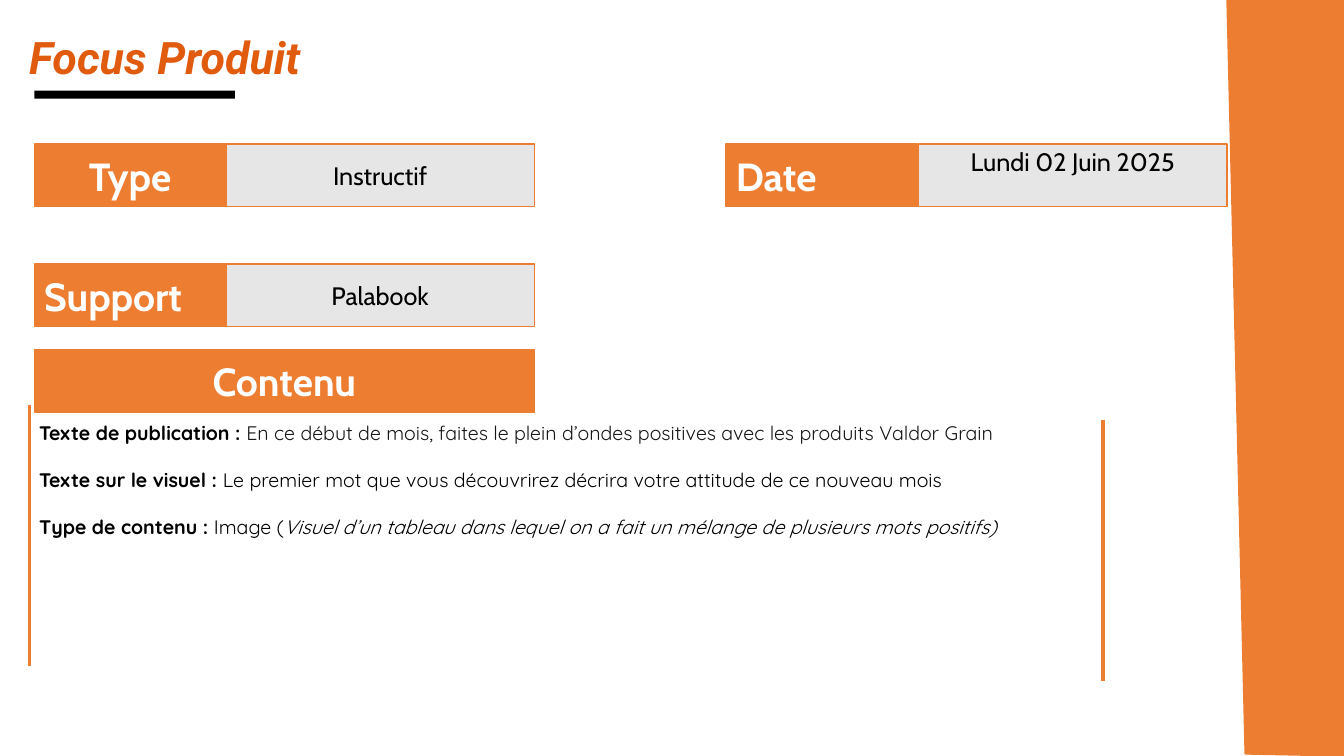
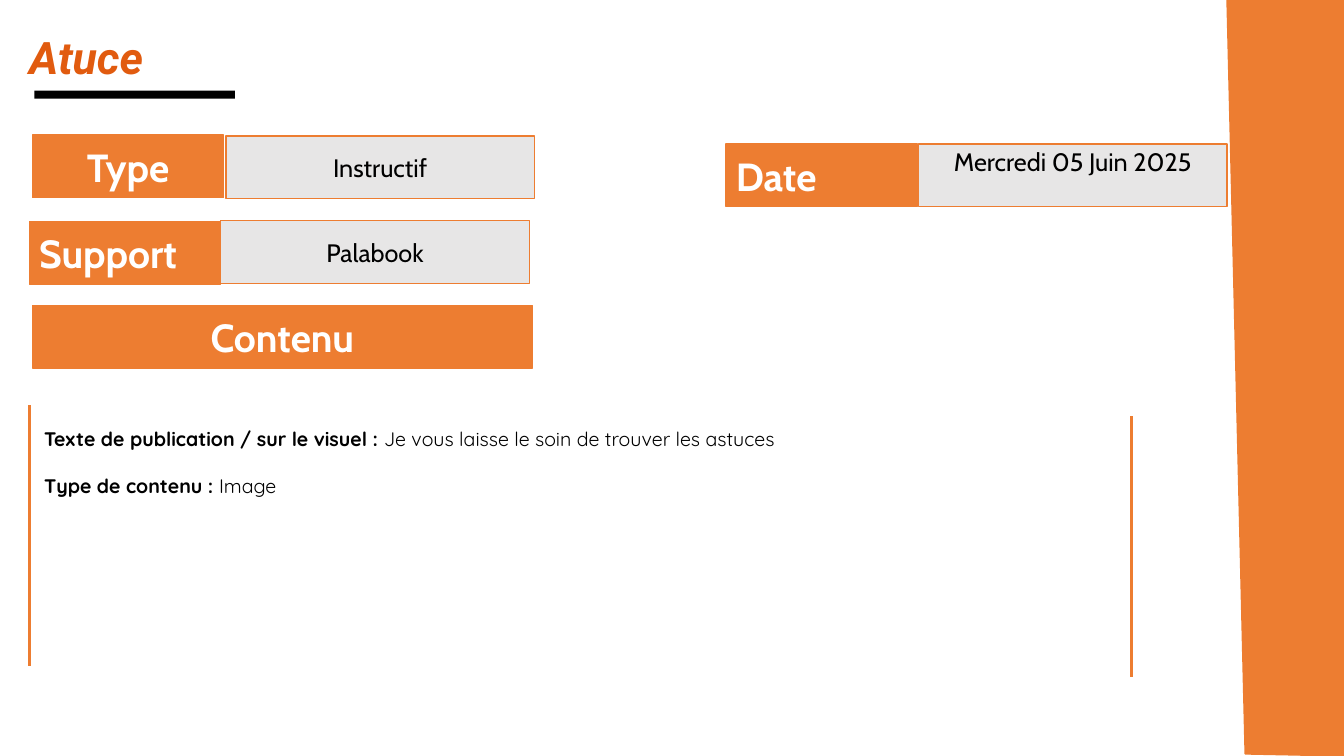
"""Build two slides of a social media content plan."""
from pptx import Presentation
from pptx.dml.color import RGBColor
from pptx.enum.shapes import MSO_CONNECTOR, MSO_SHAPE
from pptx.enum.text import MSO_ANCHOR, PP_ALIGN
from pptx.oxml.ns import qn
from pptx.util import Inches, Pt
from lxml.etree import SubElement

ORANGE = RGBColor(0xED, 0x7D, 0x31)
RUST = RGBColor(0xE1, 0x5B, 0x0F)
GREY = RGBColor(0xE7, 0xE6, 0xE6)
INK = RGBColor(0x18, 0x17, 0x17)
BLACK = RGBColor(0, 0, 0)
WHITE = RGBColor(0xFF, 0xFF, 0xFF)

ROW, LABEL, VALUE = 0.62, 1.9, 3.06
BAND = [(12.17, 0), (13.33, 0), (13.34, 7.5), (12.35, 7.48)]

SLIDES = [
    {
        "title": "Focus Produit",
        "date": "Lundi 02 Juin 2025",
        "type": [(0.34, 1.43), (2.24, 1.43)],
        "support": [(0.34, 2.62), (2.24, 2.62)],
        "header": (0.34, 3.47),
        "rule": (10.94, 4.17),
        "body": (0.29, 4.13, 10.82, 1.28),
        "lines": [
            [("Texte de publication : ", "b", BLACK),
             ("En ce début de mois, faites le plein d’ondes positives "
              "avec les produits Valdor Grain", "", INK)],
            [("Texte sur le visuel : ", "b", BLACK),
             ("Le premier mot que vous découvrirez décrira votre attitude "
              "de ce nouveau mois", "", BLACK)],
            [("Type de contenu :", "b", BLACK),
             (" Image (", "", BLACK),
             ("Visuel d’un tableau dans lequel on a fait un mélange "
              "de plusieurs mots positifs)", "i", BLACK)],
        ],
    },
    {
        "title": "Atuce",
        "date": "Mercredi 05 Juin 2025",
        "type": [(0.32, 1.34), (2.24, 1.35)],
        "support": [(0.29, 2.2), (2.19, 2.19)],
        "header": (0.32, 3.03),
        "rule": (11.22, 4.13),
        "body": (0.34, 4.19, 10.89, 0.81),
        "lines": [
            [("Texte de publication / sur le visuel : ", "b", BLACK),
             ("Je vous laisse le soin de trouver les astuces", "", BLACK)],
            [("Type de contenu : ", "b", BLACK), ("Image", "", BLACK)],
        ],
    },
]


def style(para, name, size, color, bold=False, italic=False):
    font = para.font
    font.name, font.size = name, Pt(size)
    font.bold, font.italic = bold, italic
    font.color.rgb = color


def paint(shape, fill, line=None):
    shape.shadow.inherit = False
    shape.fill.solid()
    shape.fill.fore_color.rgb = fill
    if line is None:
        shape.line.fill.background()
    else:
        shape.line.color.rgb = line
        shape.line.width = Pt(1)


def add_box(slide, spot, width, height, fill, line=None):
    box = slide.shapes.add_shape(
        MSO_SHAPE.RECTANGLE, *map(Inches, (*spot, width, height)))
    paint(box, fill, line)
    return box


def add_cell(slide, spot, width, text, head=False, align=PP_ALIGN.CENTER):
    cell = add_box(slide, spot, width, ROW, ORANGE if head else GREY, ORANGE)
    frame = cell.text_frame
    frame.vertical_anchor = MSO_ANCHOR.MIDDLE
    para = frame.paragraphs[0]
    para.text, para.alignment = text, align
    style(para, "Cabin", 28 if head else 18, WHITE if head else BLACK, head)
    return frame


def add_rule(slide, left, top):
    rule = slide.shapes.add_connector(
        MSO_CONNECTOR.STRAIGHT, *map(Inches, (left, top, left, top + 2.59)))
    rule.line.color.rgb = ORANGE
    rule.line.width = Pt(2.25)
    SubElement(rule._element.spPr, qn("a:effectLst"))


def add_text(slide, area):
    frame = slide.shapes.add_textbox(*map(Inches, area)).text_frame
    frame.word_wrap = True
    return frame


def add_frame(slide, title):
    start, *rest = [(Inches(x), Inches(y)) for x, y in BAND]
    band = slide.shapes.build_freeform(*start)
    band.add_line_segments(rest, close=True)
    paint(band.convert_to_shape(), ORANGE, ORANGE)
    add_box(slide, (0.34, 0.9), 1.99, 0.08, BLACK)
    para = add_text(slide, (0.19, 0.25, 11.03, 0.52)).paragraphs[0]
    para.text = title
    style(para, "Roboto", 32, RUST, True, True)


def add_body(slide, area, lines):
    frame = add_text(slide, area)
    for num, line in enumerate(lines):
        para = frame.add_paragraph() if num else frame.paragraphs[0]
        para.space_before = Pt(16.5 if num else 0)
        for text, mark, color in line:
            run = para.add_run()
            run.text = text
            style(run, "Quicksand", 14, color, mark == "b", mark == "i")


def add_plan(deck, plan):
    slide = deck.slides.add_slide(deck.slide_layouts[6])
    add_frame(slide, plan["title"])
    rows = [("Type", "Instructif", plan["type"], PP_ALIGN.CENTER),
            ("Support", "Palabook", plan["support"], PP_ALIGN.LEFT),
            ("Date", plan["date"], [(7.2, 1.43), (9.11, 1.43)],
             PP_ALIGN.LEFT)]
    for label, value, (left, right), align in rows:
        add_cell(slide, left, LABEL, label, True, align)
        frame = add_cell(slide, right, VALUE, value)
        if label == "Date":
            frame.vertical_anchor = MSO_ANCHOR.TOP
            frame.margin_top = Inches(0.02)
    add_cell(slide, plan["header"], LABEL + VALUE, "Contenu", True)
    add_rule(slide, 0.29, 4.02)
    add_rule(slide, *plan["rule"])
    add_body(slide, plan["body"], plan["lines"])


def main():
    deck = Presentation()
    deck.slide_width, deck.slide_height = Inches(13.33), Inches(7.5)
    for plan in SLIDES:
        add_plan(deck, plan)
    deck.save("out.pptx")


if __name__ == "__main__":
    main()
